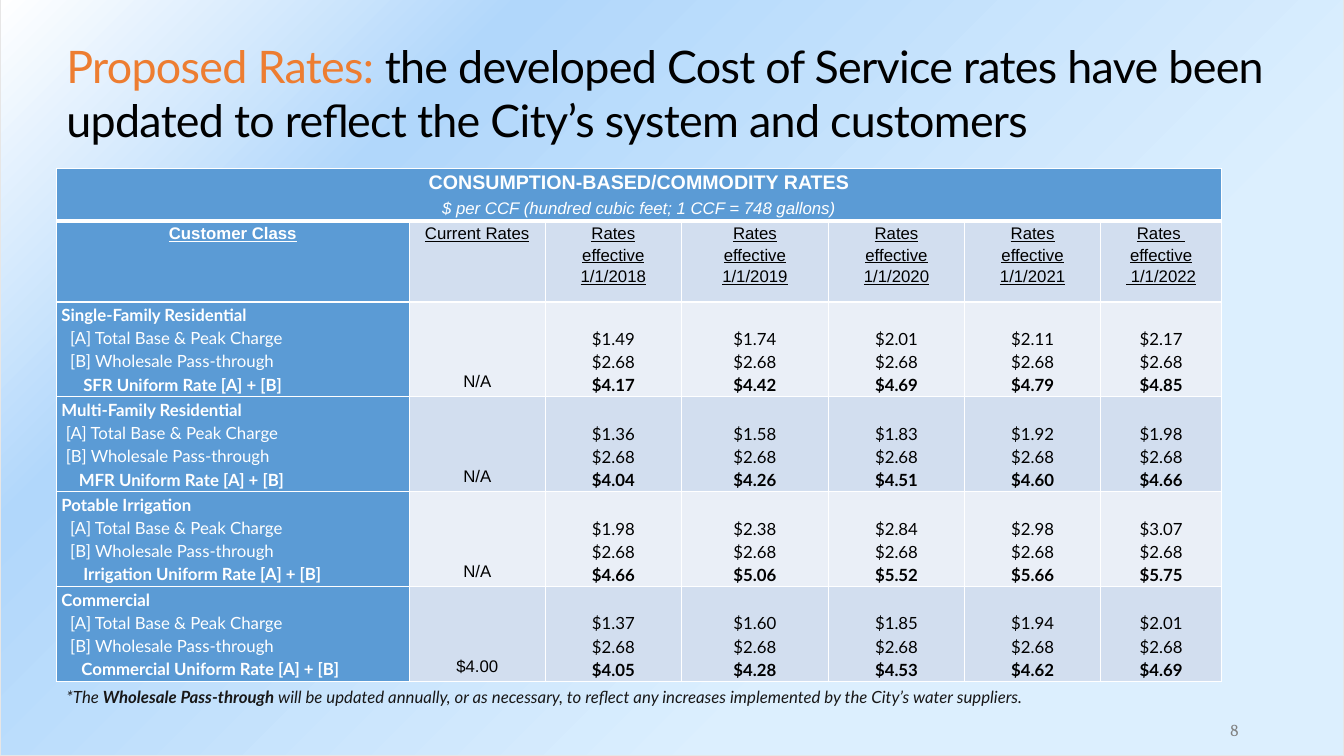
from lxml import etree
from pptx import Presentation
from pptx.dml.color import RGBColor
from pptx.enum.shapes import MSO_SHAPE
from pptx.enum.text import MSO_ANCHOR, PP_ALIGN
from pptx.oxml import parse_xml
from pptx.oxml.ns import nsdecls, qn
from pptx.util import Pt

RECT = MSO_SHAPE.RECTANGLE
TOP, MIDDLE, BOTTOM = MSO_ANCHOR.TOP, MSO_ANCHOR.MIDDLE, MSO_ANCHOR.BOTTOM
LEFT, CENTER = PP_ALIGN.LEFT, PP_ALIGN.CENTER

WHITE = RGBColor(0xFF, 0xFF, 0xFF)
BLACK = RGBColor(0, 0, 0)
INK = RGBColor(0x18, 0x17, 0x17)
GRAY = RGBColor(0x80, 0x80, 0x80)
EDGE = RGBColor(0xE7, 0xE6, 0xE6)
ORANGE = RGBColor(0xED, 0x7D, 0x31)
BLUE = RGBColor(0x5B, 0x9B, 0xD5)
BAND = RGBColor(0xD2, 0xDE, 0xEF)
PALE = RGBColor(0xEA, 0xEF, 0xF7)
GLOW = [(30, RGBColor(0xDC, 0xEF, 0xFE)), (75, RGBColor(0xB1, 0xD7, 0xFB)), (100, WHITE)]

COLS = [252, 97.2, 97.2, 105.1, 97.2, 97.2, 86.4]
ROWS = [36.4, 57.6] + [67.8] * 4
HEADS = [
    ["Current Rates"],
    ["Rates", "effective", "1/1/2018"],
    ["Rates", "effective", "1/1/2019"],
    ["Rates", "effective", "1/1/2020"],
    ["Rates", "effective", "1/1/2021"],
    ["Rates ", "effective", " 1/1/2022"],
]
PASS = "$2.68"
# class, total label, indents of parts and total, current rate, base charges, totals
GROUPS = [
    ("Single-Family Residential", "SFR Uniform Rate [A] + [B]", 6.2, 15.6, "N/A",
     ["$1.49", "$1.74", "$2.01", "$2.11", "$2.17"],
     ["$4.17", "$4.42", "$4.69", "$4.79", "$4.85"]),
    ("Multi-Family Residential", "MFR Uniform Rate [A] + [B]", 3.1, 12.4, "N/A",
     ["$1.36", "$1.58", "$1.83", "$1.92", "$1.98"],
     ["$4.04", "$4.26", "$4.51", "$4.60", "$4.66"]),
    ("Potable Irrigation", "Irrigation Uniform Rate [A] + [B]", 6.2, 15.6, "N/A",
     ["$1.98", "$2.38", "$2.84", "$2.98", "$3.07"],
     ["$4.66", "$5.06", "$5.52", "$5.66", "$5.75"]),
    ("Commercial", "Commercial Uniform Rate [A] + [B]", 6.2, 14.3, "$4.00",
     ["$1.37", "$1.60", "$1.85", "$1.94", "$2.01"],
     ["$4.05", "$4.28", "$4.53", "$4.62", "$4.69"]),
]


class Deck:
    def __init__(self):
        self.prs = Presentation()
        self.prs.slide_width, self.prs.slide_height = Pt(960), Pt(540)
        self.slide = self.prs.slides.add_slide(self.prs.slide_layouts[6])
        self.font = "Lato"

    def style(self, run, size, color, font=None, bold=False, italic=False, line=False):
        face = run.font
        face.name, face.size = font or self.font, Pt(size)
        face.bold, face.italic, face.underline = bold, italic, line
        face.color.rgb = color

    def back(self, stops):
        """Cover the slide with a glow that spreads from the lower right corner."""
        box = self.slide.shapes.add_shape(RECT, 0, 0, Pt(960), Pt(540))
        box.shadow.inherit = False
        box.line.color.rgb, box.line.width = EDGE, Pt(0.75)
        box.fill.gradient()
        grad = box._element.spPr.find(qn("a:gradFill"))
        marks = "".join(
            f'<a:gs pos="{pos * 1000}"><a:srgbClr val="{color}"/></a:gs>' for pos, color in stops)
        grad.getparent().replace(grad, parse_xml(
            f'<a:gradFill {nsdecls("a")} rotWithShape="1"><a:gsLst>{marks}</a:gsLst>'
            '<a:path path="circle"><a:fillToRect l="100000" t="100000"/></a:path></a:gradFill>'))

    def text(self, x, y, w, h, parts, anchor=TOP, align=LEFT, inset=7.2):
        """Add one paragraph; each part is a text and its run style."""
        frame = self.slide.shapes.add_textbox(Pt(x), Pt(y), Pt(w), Pt(h)).text_frame
        frame.word_wrap, frame.vertical_anchor = True, anchor
        frame.margin_left = frame.margin_right = Pt(inset)
        frame.margin_top = frame.margin_bottom = Pt(3.6)
        para = frame.paragraphs[0]
        para.alignment = align
        for words, look in parts:
            run = para.add_run()
            run.text = words
            self.style(run, **look)
        return para

    def grid(self, x, y, cols, rows):
        frame = self.slide.shapes.add_table(
            len(rows), len(cols), Pt(x), Pt(y), Pt(sum(cols)), Pt(sum(rows)))
        table = frame.table
        for col, width in zip(table.columns, cols):
            col.width = Pt(width)
        for row, height in zip(table.rows, rows):
            row.height = Pt(height)
        for r in range(len(rows)):
            for c in range(len(cols)):
                self.rule(table.cell(r, c), {"T": 3} if r == 1 else {"B": 3} if r == 0 else {})
        return table

    def rule(self, cell, thick):
        """Draw white cell borders, 1 pt unless a side is listed in thick."""
        props = cell._tc.get_or_add_tcPr()
        for side in "LRTB":
            line = etree.SubElement(props, qn(f"a:ln{side}"), w=str(Pt(thick.get(side, 1))))
            fill = etree.SubElement(line, qn("a:solidFill"))
            etree.SubElement(fill, qn("a:srgbClr"), val=str(WHITE))

    def cell(self, cell, fill, lines, looks, anchor=TOP, align=CENTER, foot=0, dents=()):
        """Fill a cell with one look per line and optional left indents."""
        cell.fill.solid()
        cell.fill.fore_color.rgb = fill
        cell.margin_left = cell.margin_right = Pt(3.6)
        cell.margin_top, cell.margin_bottom = 0, Pt(foot)
        cell.vertical_anchor = anchor
        cell.text_frame.text = "\n".join(lines)
        for para, look in zip(cell.text_frame.paragraphs, looks):
            para.alignment, para.line_spacing = align, 1.15
            self.style(para.runs[0], **look)
        for para, dent in zip(cell.text_frame.paragraphs, dents):
            props = para._p.get_or_add_pPr()
            props.set("marL", str(Pt(dent)))
            props.set("indent", "0")


def rates(deck):
    table = deck.grid(40.3, 120.2, COLS, ROWS)
    arial = dict(size=12, color=BLACK, font="Arial")
    white = dict(size=12, color=WHITE)
    black = dict(size=12, color=BLACK)

    head = table.cell(0, 0)
    head.merge(table.cell(0, len(COLS) - 1))
    deck.cell(head, BLUE,
              ["CONSUMPTION-BASED/COMMODITY RATES",
               "$ per CCF (hundred cubic feet; 1 CCF = 748 gallons)"],
              [dict(arial, size=14, color=WHITE, bold=True),
               dict(arial, color=WHITE, italic=True)])
    head.text_frame.paragraphs[1].space_before = Pt(2)

    deck.cell(table.cell(1, 0), BLUE, ["Customer Class"],
              [dict(arial, color=WHITE, bold=True, line=True)])
    for c, lines in enumerate(HEADS, 1):
        deck.cell(table.cell(1, c), BAND, lines, [dict(arial, line=True)] * len(lines))

    for r, (name, total, dent, deep, now, base, sums) in enumerate(GROUPS, 2):
        fill = BAND if r % 2 else PALE
        strong = dict(white, bold=True)
        deck.cell(table.cell(r, 0), BLUE,
                  [name, "[A] Total Base & Peak Charge", "[B] Wholesale Pass-through", total],
                  [strong, white, white, strong], align=LEFT, dents=[0, dent, dent, deep])
        deck.cell(table.cell(r, 1), fill, [now], [arial], anchor=BOTTOM, foot=4.2)
        for c, (charge, full) in enumerate(zip(base, sums), 2):
            deck.cell(table.cell(r, c), fill, [charge, PASS, full],
                      [black, black, dict(black, bold=True)], anchor=BOTTOM, foot=1.2)


def main():
    deck = Deck()
    deck.back(GLOW)
    deck.text(849, 510.5, 65.5, 21.6, [("8", dict(size=12, color=GRAY, font="Cambria"))],
              anchor=BOTTOM, align=CENTER, inset=3.6)
    title = deck.text(40.3, 23.8, 880, 84.2, [
        ("Proposed Rates: ", dict(size=32, color=ORANGE)),
        ("the developed Cost of Service rates have been updated to reflect "
         "the City’s system and customers", dict(size=32, color=BLACK)),
    ], anchor=MIDDLE)
    for run in title.runs:
        run.font._element.set("spc", "-50")
    rates(deck)
    note = dict(size=12, color=INK, italic=True)
    deck.text(40.3, 486.7, 785.5, 21.6, [
        ("*The ", note),
        ("Wholesale Pass-through ", dict(note, bold=True)),
        ("will be updated annually, or as necessary, to reflect any increases "
         "implemented by the City’s water suppliers.", note),
    ])
    deck.prs.save("out.pptx")


if __name__ == "__main__":
    main()
